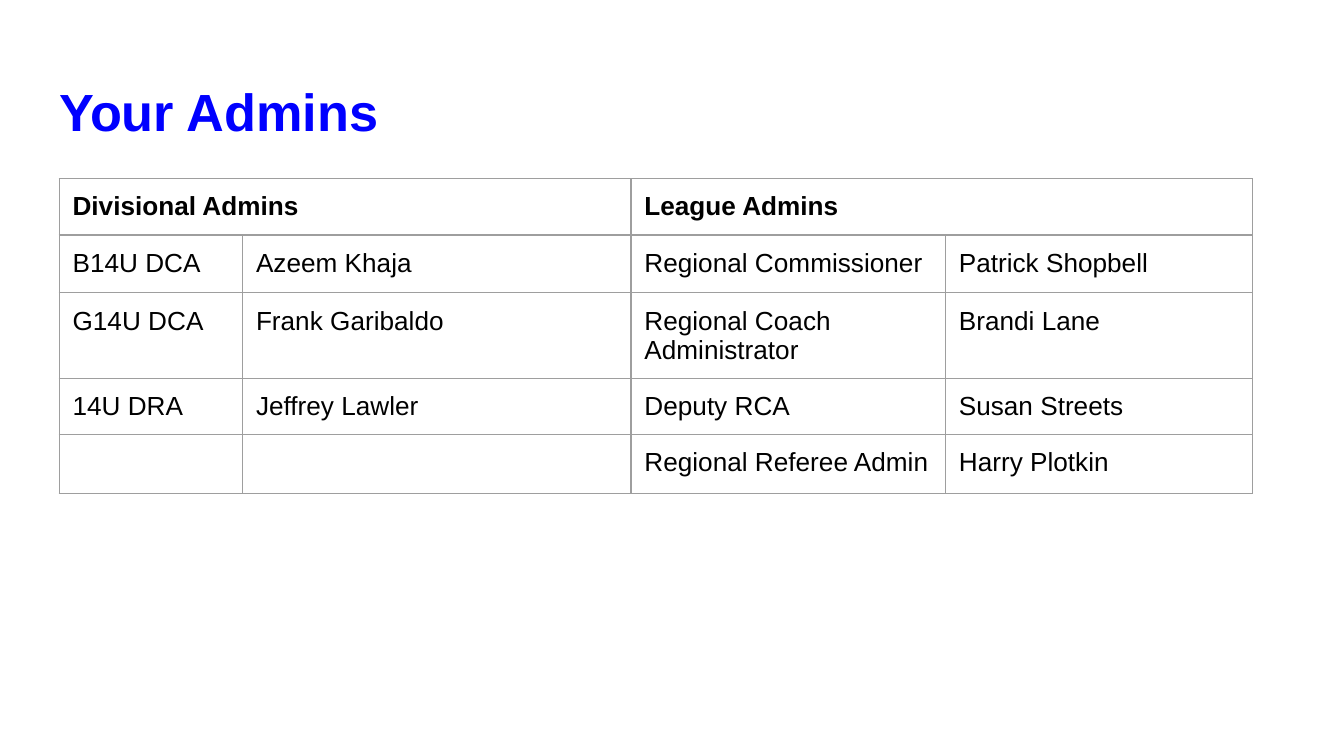
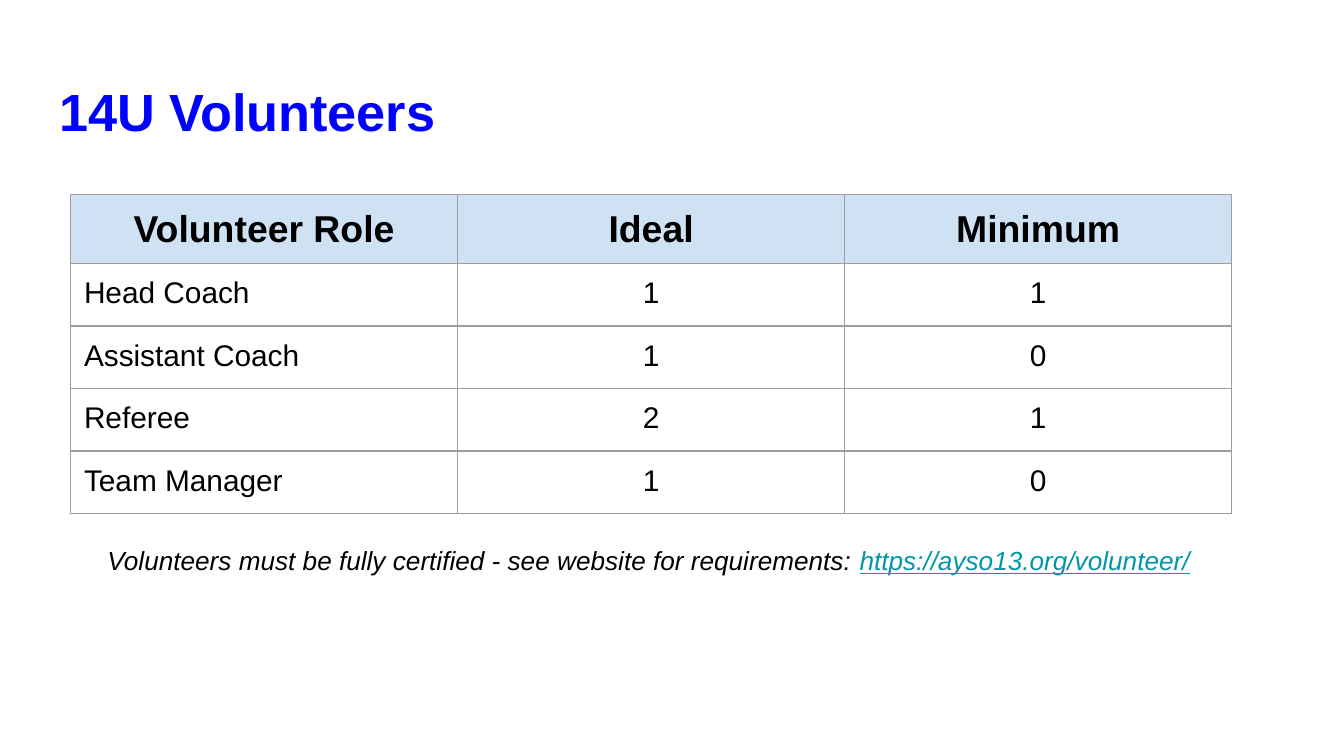
from dataclasses import dataclass
from typing import Optional

from lxml.etree import SubElement
from pptx import Presentation
from pptx.dml.color import RGBColor
from pptx.enum.text import MSO_ANCHOR as Anchor, MSO_AUTO_SIZE as AutoSize, PP_ALIGN as Align
from pptx.oxml.ns import qn
from pptx.util import Emu, Pt

PX = 4572  # 200 px to the inch
FONT = "Arial"
BLUE = RGBColor(0x00, 0x00, 0xFF)
BLACK = RGBColor(0x00, 0x00, 0x00)
GREY = RGBColor(0x9E, 0x9E, 0x9E)
PALE_BLUE = RGBColor(0xCF, 0xE2, 0xF3)
TEAL = RGBColor(0x00, 0x97, 0xA7)
INSET = 20
BORDER = Pt(0.75)


@dataclass(frozen=True)
class Grid:
    left: int
    top: int
    columns: list[int]
    heights: list[int]
    rows: list[list[str]]
    header_size: int
    body_size: int
    header_fill: Optional[RGBColor] = None
    header_span: int = 1
    centre_header: bool = False
    centre_from: int = 99  # first body column that is centred


ADMINS = Grid(
    left=88, top=266, columns=[273, 578, 468, 457], heights=[80, 86, 88, 80, 86],
    rows=[
        ["Divisional Admins", "", "League Admins", ""],
        ["B14U DCA", "Azeem Khaja", "Regional Commissioner", "Patrick Shopbell"],
        ["G14U DCA", "Frank Garibaldo", "Regional Coach Administrator", "Brandi Lane"],
        ["14U DRA", "Jeffrey Lawler", "Deputy RCA", "Susan Streets"],
        ["", "", "Regional Referee Admin", "Harry Plotkin"],
    ],
    header_size=14, body_size=14, header_span=2,
)

VOLUNTEERS = Grid(
    left=105, top=290, columns=[576] * 3, heights=[84] + [93] * 4,
    rows=[
        ["Volunteer Role", "Ideal", "Minimum"],
        ["Head Coach", "1", "1"],
        ["Assistant Coach", "1", "0"],
        ["Referee", "2", "1"],
        ["Team Manager", "1", "0"],
    ],
    header_size=20, body_size=16, header_fill=PALE_BLUE,
    centre_header=True, centre_from=1,
)


def px(length: int) -> Emu:
    return Emu(length * PX)


def set_insets(frame) -> None:
    frame.margin_left = frame.margin_right = px(INSET)
    frame.margin_top = frame.margin_bottom = px(INSET)


def add_span(para, text: str, *, size: int, color: RGBColor = BLACK, bold: bool = False,
             italic: bool = False, underline: bool = False) -> None:
    """Add one formatted run; empty text only sets the size of the line."""
    if not text:
        SubElement(para._p, qn("a:endParaRPr"), sz=str(size * 100))
        return
    span = para.add_run()
    span.text = text
    font = span.font
    font.name, font.size, font.color.rgb = FONT, Pt(size), color
    font.bold, font.italic, font.underline = bold, italic, underline


def add_page(deck, title: str):
    """Add a title-only slide with the shared title style."""
    page = deck.slides.add_slide(deck.slide_layouts[5])
    box = page.shapes.title
    box.left, box.top, box.width, box.height = map(px, (68, 98, 1864, 126))
    frame = box.text_frame
    frame.auto_size, frame.word_wrap = AutoSize.NONE, True
    frame.vertical_anchor = Anchor.TOP
    set_insets(frame)
    para = frame.paragraphs[0]
    para.alignment = Align.LEFT
    add_span(para, title, size=28, color=BLUE, bold=True)
    return page


def add_borders(cell) -> None:
    properties = cell._tc.get_or_add_tcPr()
    for side in ("lnL", "lnR", "lnT", "lnB"):
        line = SubElement(properties, qn(f"a:{side}"), w=str(BORDER))
        fill = SubElement(line, qn("a:solidFill"))
        SubElement(fill, qn("a:srgbClr"), val=str(GREY))


def add_grid(page, grid: Grid) -> None:
    """Draw a table with thin grey borders and a bold first row."""
    table = page.shapes.add_table(
        len(grid.rows), len(grid.columns), px(grid.left), px(grid.top),
        px(sum(grid.columns)), px(sum(grid.heights))).table
    table.first_row = table.horz_banding = False
    for column, width in zip(table.columns, grid.columns):
        column.width = px(width)
    for row, height in zip(table.rows, grid.heights):
        row.height = px(height)

    for r, texts in enumerate(grid.rows):
        header = r == 0
        for c, text in enumerate(texts):
            cell = table.cell(r, c)
            set_insets(cell)
            add_borders(cell)
            if header and grid.header_fill is not None:
                cell.fill.solid()
                cell.fill.fore_color.rgb = grid.header_fill
            else:
                cell.fill.background()
            para = cell.text_frame.paragraphs[0]
            centred = grid.centre_header if header else c >= grid.centre_from
            para.alignment = Align.CENTER if centred else Align.LEFT
            add_span(para, text, bold=header,
                     size=grid.header_size if header else grid.body_size)

    # Header cells that cover several columns
    if grid.header_span > 1:
        for c in range(0, len(grid.columns), grid.header_span):
            table.cell(0, c).merge(table.cell(0, c + grid.header_span - 1))


def add_note(page) -> None:
    box = page.shapes.add_textbox(*map(px, (107, 790, 1728, 138)))
    frame = box.text_frame
    frame.word_wrap = True
    set_insets(frame)
    para = frame.paragraphs[0]
    para.alignment = Align.CENTER
    add_span(para, "Volunteers must be fully certified - see website for requirements: ",
             size=14, italic=True)
    add_span(para, "https://ayso13.org/volunteer/", size=14, color=TEAL,
             italic=True, underline=True)
    add_span(para, " ", size=14, italic=True)


def main() -> None:
    deck = Presentation()
    deck.slide_width, deck.slide_height = px(2000), px(1125)

    # Admins
    add_grid(add_page(deck, "Your Admins"), ADMINS)

    # Volunteers
    page = add_page(deck, "14U Volunteers")
    add_grid(page, VOLUNTEERS)
    add_note(page)

    deck.save("out.pptx")


if __name__ == "__main__":
    main()
